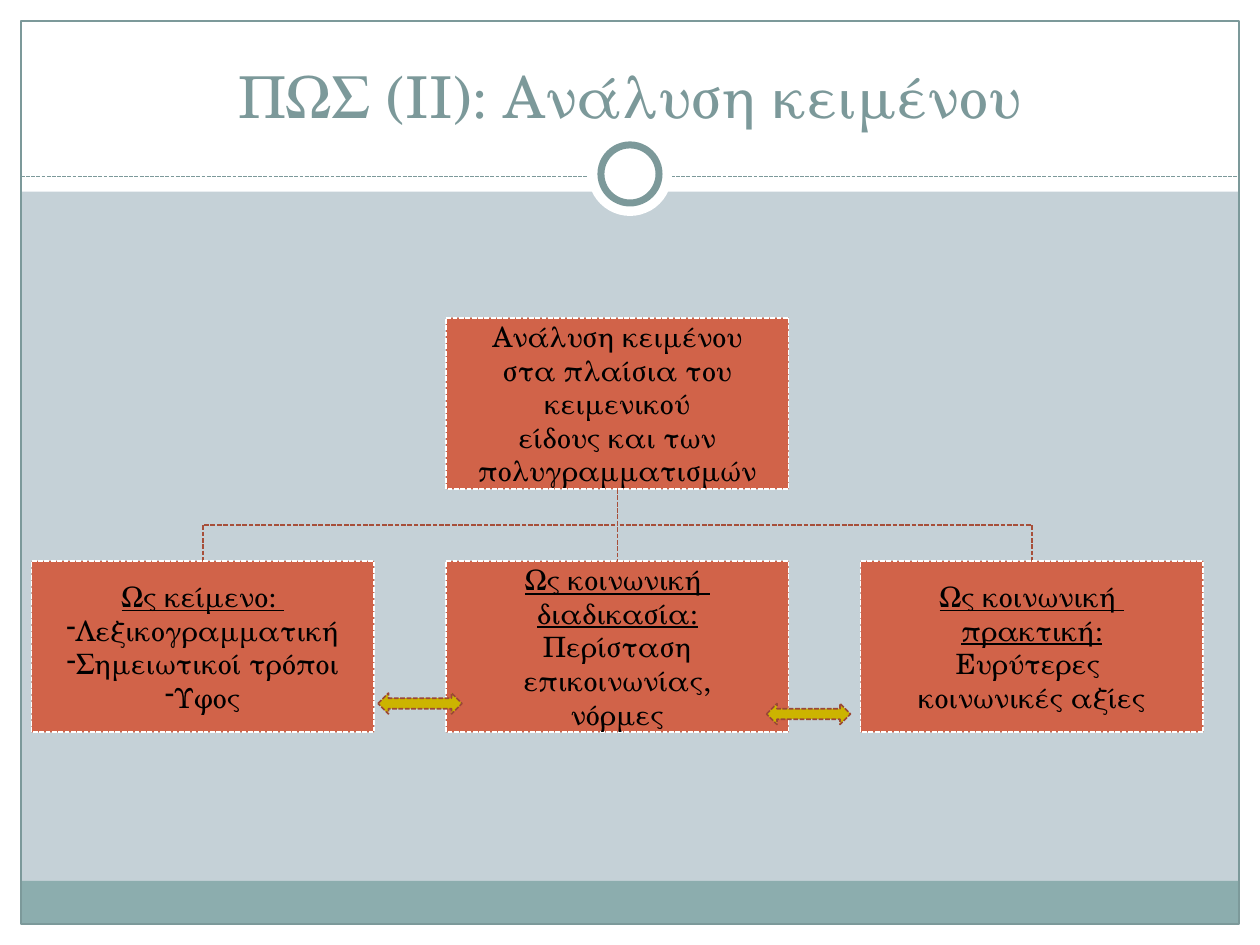
"""Build a slide with a text-analysis tree of one root and three linked branches."""
from lxml import etree
from pptx import Presentation
from pptx import util as u
from pptx.dml.color import RGBColor
from pptx.enum import dml, shapes, text
from pptx.oxml.ns import qn

THEME = {
    "font": "TeX Gyre Schola", "title_size": 33, "box_size": 16,
    "white": "FFFFFF", "black": "000000", "background": "C5D1D7",
    "accent": "7C999A", "footer": "8CADAE", "box": "D16349",
    "branch": "A74F3A", "arrow": "CCB400", "arrow_line": "9B4936",
}
TITLE = "ΠΩΣ (ΙΙ): Ανάλυση κειμένου"
ROOT = {"heading": [], "bullet": None,
        "body": ["Ανάλυση κειμένου", " στα πλαίσια του ", "κειμενικού",
                 " είδους και των ", "πολυγραμματισμών"]}
BRANCHES = [
    {"heading": ["Ως κείμενο: "], "bullet": "-",
     "body": ["Λεξικογραμματική", "Σημειωτικοί τρόποι", "Ύφος"]},
    {"heading": ["Ως κοινωνική ", "διαδικασία:"], "bullet": None,
     "body": ["Περίσταση", " επικοινωνίας, ", "νόρμες"]},
    {"heading": ["Ως κοινωνική ", "πρακτική:"], "bullet": None,
     "body": ["Ευρύτερες ", "κοινωνικές αξίες"]},
]
ARROWS = [(216, 396), (438, 402)]

WIDTH, HEIGHT, MARGIN = 720, 540, 12
HEADER_HEIGHT, RULE_TOP = 109.5, 100.8
BOX_WIDTH, BOX_HEIGHT = 195.8, 97.9
BOX_LEFT, BOX_PITCH = 18, 236.9
ROOT_TOP, BRANCH_TOP = 181.6, 320.6


def color(name):
    return RGBColor.from_string(THEME[name])


def style_line(line, name, weight, dashed=False):
    line.color.rgb = color(name)
    line.width = u.Pt(weight)
    if dashed:
        line.dash_style = dml.MSO_LINE.SQUARE_DOT


def add_preset(slide, kind, box, fill=None, outline=None):
    shape = slide.shapes.add_shape(kind, *map(u.Pt, box))
    shape.shadow.inherit = False
    if fill:
        shape.fill.solid()
        shape.fill.fore_color.rgb = color(fill)
    else:
        shape.fill.background()
    if outline:
        style_line(shape.line, *outline)
    else:
        shape.line.fill.background()
    return shape


def add_straight(slide, start, end, outline):
    line = slide.shapes.add_connector(shapes.MSO_CONNECTOR.STRAIGHT, *map(u.Pt, start + end))
    style_line(line.line, *outline)
    etree.SubElement(line.element.spPr, qn("a:effectLst"))


def add_elbow(slide, points, outline):
    first, *rest = [tuple(map(u.Pt, point)) for point in points]
    builder = slide.shapes.build_freeform(*first)
    builder.add_line_segments(rest, close=False)
    elbow = builder.convert_to_shape()
    elbow.shadow.inherit = False
    elbow.fill.background()
    style_line(elbow.line, *outline)


def format_text(paragraph, size, name, underline=False):
    paragraph.alignment = text.PP_ALIGN.CENTER
    for run in paragraph.runs:
        run.font.name = THEME["font"]
        run.font.size = u.Pt(size)
        run.font.color.rgb = color(name)
        run.font.underline = underline


def set_insets(frame, inset):
    frame.margin_left = frame.margin_right = u.Pt(inset)
    frame.margin_top = frame.margin_bottom = u.Pt(inset)


def add_frame(slide):
    rectangle, oval = shapes.MSO_SHAPE.RECTANGLE, shapes.MSO_SHAPE.OVAL
    right, bottom = WIDTH - MARGIN, HEIGHT - MARGIN
    for box in [(0, bottom, WIDTH, MARGIN), (0, 0, WIDTH, HEADER_HEIGHT),
                (0, 0, MARGIN, HEIGHT), (right, 0, MARGIN, HEIGHT)]:
        add_preset(slide, rectangle, box, "white")
    inner_width = WIDTH - 2 * MARGIN
    add_preset(slide, rectangle, (MARGIN, 503.3, inner_width, 24.4), "footer")
    add_preset(slide, rectangle, (MARGIN, MARGIN, inner_width, HEIGHT - 2 * MARGIN),
               outline=("accent", 0.75))
    add_straight(slide, (MARGIN, RULE_TOP), (right, RULE_TOP), ("accent", 0.75, True))
    for diameter, outline in [(48, None), (33.2, ("accent", 4))]:
        box = ((WIDTH - diameter) / 2, 99.4 - diameter / 2, diameter, diameter)
        add_preset(slide, oval, box, "white", outline)


def add_title(slide):
    title = slide.shapes.title
    title.left, title.top, title.width, title.height = map(u.Pt, (24, 18, 672, 60))
    title.text_frame.text = TITLE
    title.text_frame.vertical_anchor = text.MSO_ANCHOR.BOTTOM
    format_text(title.text_frame.paragraphs[0], THEME["title_size"], "accent")
    title.element.getparent().append(title.element)


def add_box(slide, left, top, content):
    shape = add_preset(slide, shapes.MSO_SHAPE.RECTANGLE, (left, top, BOX_WIDTH, BOX_HEIGHT),
                       "box", ("white", 0.9, True))
    frame = shape.text_frame
    frame.word_wrap = True
    frame.vertical_anchor = text.MSO_ANCHOR.MIDDLE
    set_insets(frame, 0.8)
    heading_count = len(content["heading"])
    frame.text = "\n".join(content["heading"] + content["body"])
    for index, paragraph in enumerate(frame.paragraphs):
        is_heading = index < heading_count
        format_text(paragraph, THEME["box_size"], "black", is_heading)
        if content["bullet"] and not is_heading:
            properties = paragraph._p.get_or_add_pPr()
            properties.set("marL", "0")
            properties.set("indent", "0")
            etree.SubElement(properties, qn("a:buChar"), char=content["bullet"])


def add_tree(slide):
    lefts = [BOX_LEFT + BOX_PITCH * index for index in range(len(BRANCHES))]
    centers = [left + BOX_WIDTH / 2 for left in lefts]
    root_left, root_center = lefts[1], centers[1]
    root_bottom = ROOT_TOP + BOX_HEIGHT
    middle = (root_bottom + BRANCH_TOP) / 2
    outline = ("branch", 0.9, True)
    for center in centers:
        start, end = (root_center, root_bottom), (center, BRANCH_TOP)
        if center == root_center:
            add_straight(slide, start, end, outline)
        else:
            add_elbow(slide, [start, (root_center, middle), (center, middle), end], outline)
    add_box(slide, root_left, ROOT_TOP, ROOT)
    for left, branch in zip(lefts, BRANCHES):
        add_box(slide, left, BRANCH_TOP, branch)
    for left, top in ARROWS:
        add_preset(slide, shapes.MSO_SHAPE.LEFT_RIGHT_ARROW, (left, top, 48, 12),
                   "arrow", ("arrow_line", 0.9, True))


def main():
    presentation = Presentation()
    presentation.slide_width, presentation.slide_height = u.Pt(WIDTH), u.Pt(HEIGHT)
    slide = presentation.slides.add_slide(presentation.slide_layouts[5])
    slide.background.fill.solid()
    slide.background.fill.fore_color.rgb = color("background")
    add_frame(slide)
    add_title(slide)
    add_tree(slide)
    presentation.save("out.pptx")


if __name__ == "__main__":
    main()
